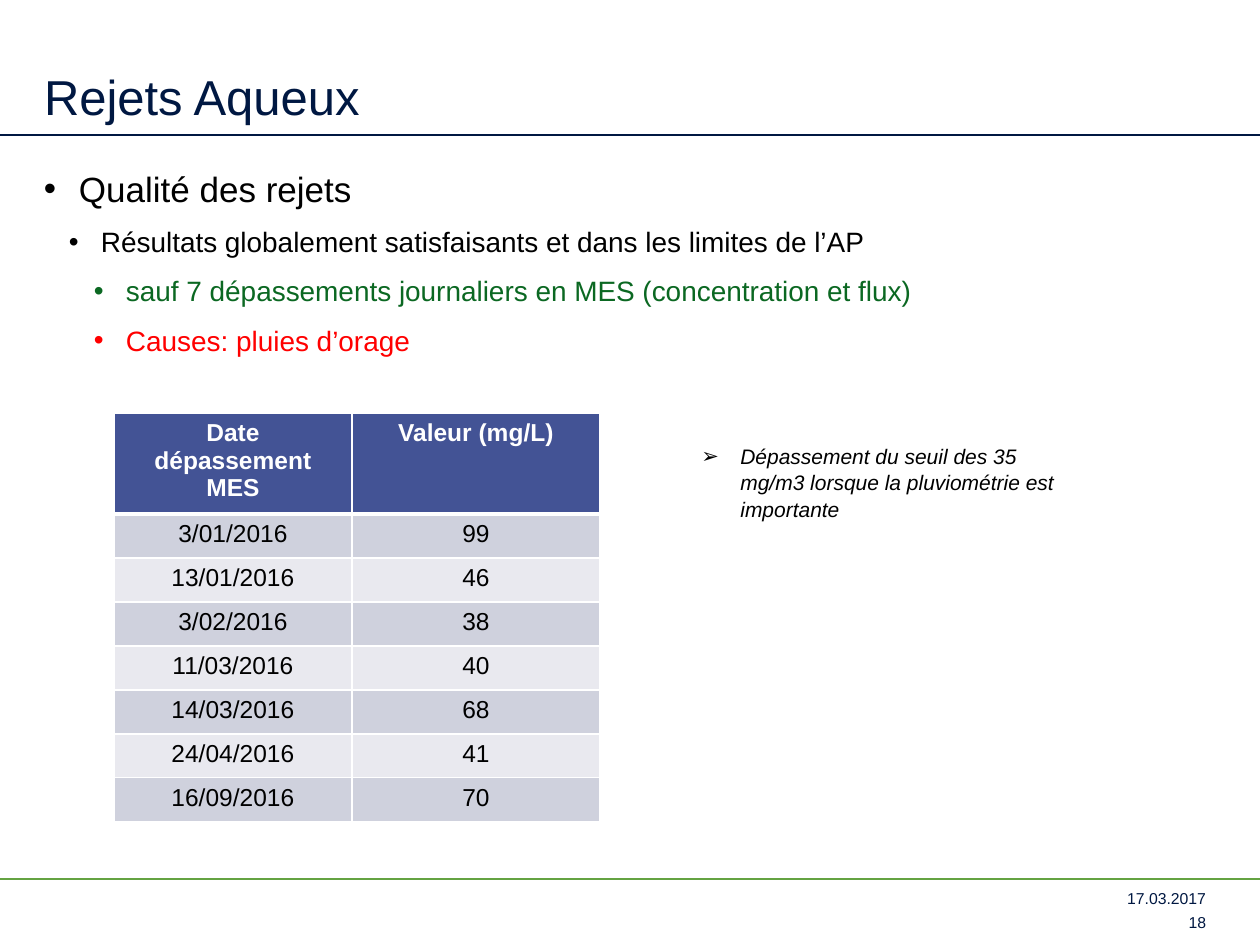
from dataclasses import dataclass

from lxml.etree import SubElement
from pptx import Presentation
from pptx.dml.color import RGBColor
from pptx.enum.shapes import MSO_CONNECTOR as Connector
from pptx.enum.text import MSO_ANCHOR as Anchor, PP_ALIGN as Align
from pptx.oxml import parse_xml
from pptx.oxml.ns import nsdecls, qn
from pptx.util import Emu, Pt

EMU_PER_PX = 914400 / 126
NAVY, GREEN, BLACK, WHITE = "001842", "64A342", "000000", "FFFFFF"
HEADER_FILL, BANDS = "435395", ("CFD1DD", "E9E9EF")


@dataclass(frozen=True)
class Box:
    left: int
    top: int
    width: int
    height: int


@dataclass(frozen=True)
class Bullet:
    text: str
    size: int
    color: str
    margin: int
    hang: int
    before: int = 0
    char: str = "•"
    italic: bool = False


@dataclass(frozen=True)
class Rule:
    y: int
    color: str


@dataclass(frozen=True)
class Footer:
    text: str
    box: Box


RULES = (Rule(135, NAVY), Rule(879, GREEN))
FOOTERS = (
    Footer("17.03.2017", Box(1096, 889, 110, 19)),
    Footer("18", Box(1082, 910, 124, 22)),
)
QUALITY = (
    Bullet("Qualité des rejets", 20, BLACK, 35, 35),
    Bullet("Résultats globalement satisfaisants et dans les limites de l’AP",
           16, BLACK, 57, 32, 8),
    Bullet("sauf 7 dépassements journaliers en MES (concentration et flux)",
           16, "0B6822", 82, 32, 8),
    Bullet("Causes: pluies d’orage", 16, "FF0000", 82, 32, 8),
)
THRESHOLD = (
    Bullet("Dépassement du seuil des 35 mg/m3 lorsque la pluviométrie est importante",
           12, BLACK, 39, 39, char="➢", italic=True),
)
EXCEEDANCES = (
    ("Date dépassement MES", "Valeur (mg/L)"),
    ("3/01/2016", "99"),
    ("13/01/2016", "46"),
    ("3/02/2016", "38"),
    ("11/03/2016", "40"),
    ("14/03/2016", "68"),
    ("24/04/2016", "41"),
    ("16/09/2016", "70"),
)
COLUMN_WIDTHS, HEADER_HEIGHT, ROW_HEIGHT = (238, 248), 101, 44


def px(length: int) -> Emu:
    """Turn pixels into EMU."""
    return Emu(round(length * EMU_PER_PX))


def rgb(color: str) -> RGBColor:
    """Turn a hex string into a colour."""
    return RGBColor.from_string(color)


def write(paragraph, text: str, *, size: int, color: str, bold: bool = False,
          italic: bool = False, align=Align.LEFT) -> None:
    """Write formatted text into a paragraph."""
    paragraph.alignment = align
    run = paragraph.add_run()
    run.text = text
    font = run.font
    font.name, font.size, font.bold, font.italic = "Arial", Pt(size), bold, italic
    font.color.rgb = rgb(color)


def place(shape, box: Box) -> None:
    """Move and size a shape."""
    shape.left, shape.top = px(box.left), px(box.top)
    shape.width, shape.height = px(box.width), px(box.height)


def prepare(frame, anchor=Anchor.TOP, inset: bool = False) -> None:
    """Set wrapping, anchor and insets of a text frame."""
    frame.word_wrap = True
    frame.vertical_anchor = anchor
    if not inset:
        frame.margin_left = frame.margin_right = 0
        frame.margin_top = frame.margin_bottom = 0


def add_frame(slide, box: Box, anchor=Anchor.TOP, inset: bool = False):
    """Add a text box and return its frame."""
    frame = slide.shapes.add_textbox(
        px(box.left), px(box.top), px(box.width), px(box.height)).text_frame
    prepare(frame, anchor, inset)
    return frame


def add_bullets(frame, bullets: tuple[Bullet, ...]) -> None:
    """Fill a frame with bulleted paragraphs."""
    for index, bullet in enumerate(bullets):
        paragraph = frame.add_paragraph() if index else frame.paragraphs[0]
        paragraph.line_spacing = 1.05
        paragraph.space_before = Pt(bullet.before)
        properties = paragraph._p.get_or_add_pPr()
        properties.set("marL", str(px(bullet.margin)))
        properties.set("indent", str(px(-bullet.hang)))
        SubElement(properties, qn("a:buFont")).set("typeface", "Arial")
        SubElement(properties, qn("a:buChar")).set("char", bullet.char)
        write(paragraph, bullet.text, size=bullet.size, color=bullet.color,
              italic=bullet.italic)


def add_rule(slide, rule: Rule) -> None:
    """Draw a line across the slide."""
    line = slide.shapes.add_connector(
        Connector.STRAIGHT, 0, px(rule.y), px(1260), px(rule.y))
    line.line.color.rgb = rgb(rule.color)
    line.line.width = Pt(1.5)
    SubElement(line._element.spPr, qn("a:effectLst"))


def set_borders(cell, top: int, bottom: int) -> None:
    """Give a cell white borders, with top and bottom widths in points."""
    widths = {"lnL": 1, "lnR": 1, "lnT": top, "lnB": bottom}
    for index, (side, width) in enumerate(widths.items()):
        cell._tc.get_or_add_tcPr().insert(index, parse_xml(
            f'<a:{side} {nsdecls("a")} w="{Pt(width)}"><a:solidFill>'
            f'<a:srgbClr val="{WHITE}"/></a:solidFill></a:{side}>'))


def add_exceedances(slide, left: int, top: int) -> None:
    """Add the table of exceedances."""
    height = HEADER_HEIGHT + ROW_HEIGHT * (len(EXCEEDANCES) - 1)
    table = slide.shapes.add_table(
        len(EXCEEDANCES), len(COLUMN_WIDTHS), px(left), px(top),
        px(sum(COLUMN_WIDTHS)), px(height)).table
    for column, width in zip(table.columns, COLUMN_WIDTHS):
        column.width = px(width)
    for row, values in enumerate(EXCEEDANCES):
        header = row == 0
        table.rows[row].height = px(HEADER_HEIGHT if header else ROW_HEIGHT)
        for column, value in enumerate(values):
            cell = table.cell(row, column)
            cell.fill.solid()
            cell.fill.fore_color.rgb = rgb(HEADER_FILL if header else BANDS[(row - 1) % 2])
            set_borders(cell, 3 if row == 1 else 1, 3 if header else 1)
            write(cell.text_frame.paragraphs[0], value, size=14, bold=header,
                  color=WHITE if header else BLACK, align=Align.CENTER)


def main() -> None:
    """Build and save the slide."""
    deck = Presentation()
    deck.slide_width, deck.slide_height = px(1260), px(945)
    slide = deck.slides.add_slide(deck.slide_layouts[5])
    for rule in RULES:
        add_rule(slide, rule)
    title = slide.shapes.title
    place(title, Box(44, 16, 1160, 109))
    prepare(title.text_frame, Anchor.BOTTOM)
    write(title.text_frame.paragraphs[0], "Rejets Aqueux", size=28, color=NAVY)
    for footer in FOOTERS:
        frame = add_frame(slide, footer.box, Anchor.BOTTOM)
        write(frame.paragraphs[0], footer.text, size=9, color=NAVY, align=Align.RIGHT)
    add_bullets(add_frame(slide, Box(44, 165, 1160, 233)), QUALITY)
    add_bullets(add_frame(slide, Box(689, 436, 407, 91), inset=True), THRESHOLD)
    add_exceedances(slide, 114, 413)
    deck.save("out.pptx")


if __name__ == "__main__":
    main()
